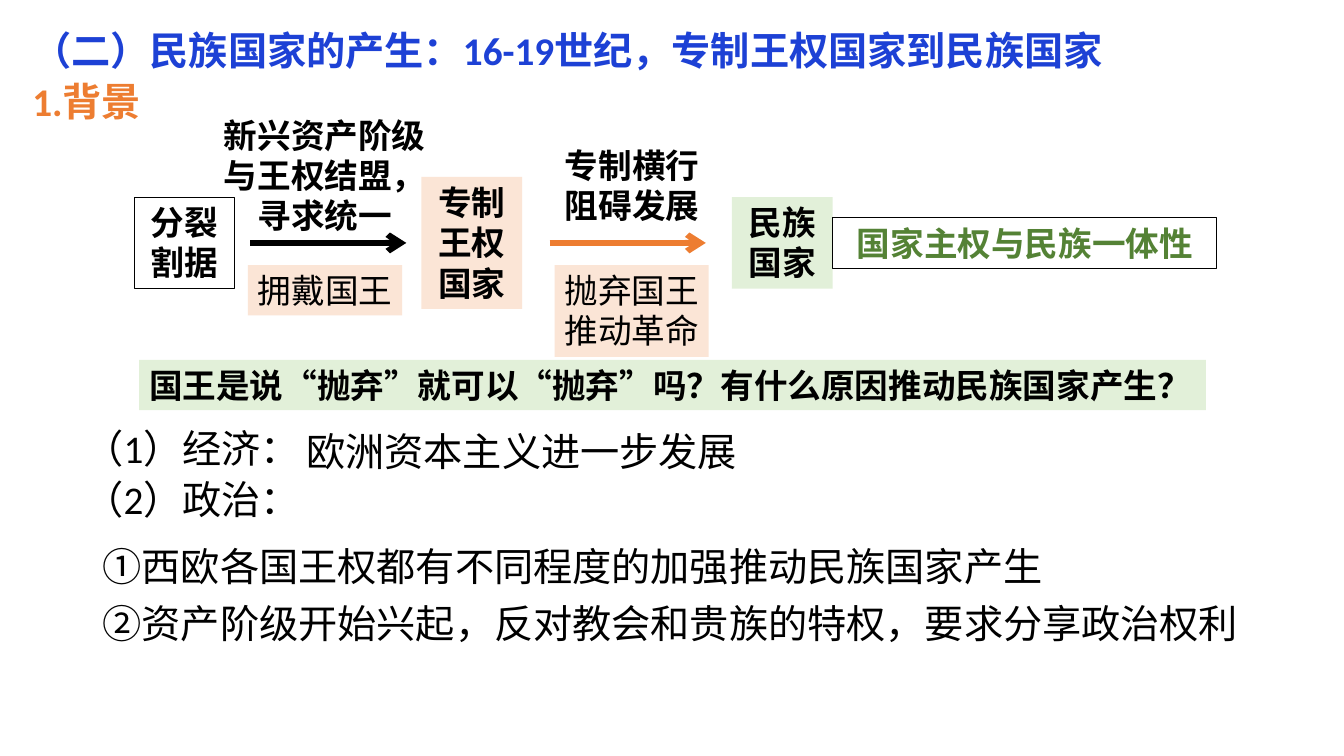
import pptx
import pptx.util
import pptx.dml.color
import pptx.enum.shapes
import pptx.enum.text
import pptx.oxml
import pptx.oxml.ns

COLORS = {"blue": "1D41D5", "orange": "ED7D31", "black": "000000",
          "peach": "FBE5D6", "mint": "E2F0D9", "green": "548235"}
LATIN, CJK = "Calibri", "Noto Sans CJK SC"
W, H = 13.33, 7.5
AXIS = 2.41          # height of the row of states and arrows
LABEL_TOP = 2.63     # captions under the arrows

# Content: title lines with their colours
TITLE = [("（二）民族国家的产生：16-19世纪，专制王权国家到民族国家", "blue"),
         ("1.背景", "orange")]

# States on the axis: lines, left, width, height, fill, border, colour, font
STATES = [
    (["专制王权国家"], 4.18, 1, 1.31, "peach", None, "black", CJK),
    (["分裂", "割据"], 1.33, 1, 0.91, None, "black", "black", CJK),
    (["民族国家"], 7.26, 1, 0.91, "mint", None, "black", CJK),
    (["国家主权与民族一体性"], 8.26, 3.81, 0.5, None, "black", "green", LATIN),
]

# Steps: arrow left, colour, cause (lines, left, top, width), result (lines, left, height)
STEPS = [
    (2.48, "black", (["新兴资产阶级与王权结盟，寻求统一"], 2.07, 1.28, 2.3),
     (["拥戴国王"], 2.46, 0.5)),
    (5.45, "orange", (["专制横行", "阻碍发展"], 5.37, 1.38, 1.8),
     (["抛弃国王", "推动革命"], 5.5, 0.91)),
]
ARROW_LENGTH = 1.55

QUESTION = "国王是说“抛弃”就可以“抛弃”吗？有什么原因推动民族国家产生？"

# Reasons: lines, box, line spacing, wrap
REASONS = [
    (["（1）经济：", "（2）政治："], (0.74, 4.11, 11.85, 1.65), 1.1, True),
    (["欧洲资本主义进一步发展"], (2.94, 4.19, 4.48, 0.57), 1.0, False),
    (["①西欧各国王权都有不同程度的加强推动民族国家产生",
      "②资产阶级开始兴起，反对教会和贵族的特权，要求分享政治权利"],
     (0.92, 5.24, 11.5, 1.23), 1.2, True),
]

ALIGN = pptx.enum.text.PP_ALIGN
ANCHOR = pptx.enum.text.MSO_ANCHOR


def rgb(name):
    return pptx.dml.color.RGBColor.from_string(COLORS[name])


def inches(*values):
    return [pptx.util.Inches(v) for v in values]


def write(sp, lines, size, colors=("black",), font=LATIN, bold=False,
          align=ALIGN.LEFT, anchor=ANCHOR.TOP, spacing=1.0, wrap=True):
    tf = sp.text_frame
    tf.auto_size = pptx.enum.text.MSO_AUTO_SIZE.NONE
    tf.word_wrap = wrap
    tf.vertical_anchor = anchor
    tf.margin_left = tf.margin_right = pptx.util.Inches(0.1)
    tf.margin_top = tf.margin_bottom = pptx.util.Inches(0.05)
    tf.text = "\n".join(lines)
    for i, p in enumerate(tf.paragraphs):
        p.alignment = align
        p.line_spacing = spacing
        p.space_before = p.space_after = pptx.util.Pt(0)
        for r in p.runs:
            r.font.size = pptx.util.Pt(size)
            r.font.bold = bold
            r.font.name = font
            r.font.color.rgb = rgb(colors[i % len(colors)])
            ea = pptx.oxml.parse_xml(
                f'<a:ea {pptx.oxml.ns.nsdecls("a")} typeface="{CJK}"/>')
            r.font._element.find(pptx.oxml.ns.qn("a:latin")).addnext(ea)


def add_text(s, box, lines, size, **style):
    write(s.shapes.add_textbox(*inches(*box)), lines, size, **style)


def add_box(s, box, lines, fill=None, border=None, **style):
    sp = s.shapes.add_shape(pptx.enum.shapes.MSO_SHAPE.RECTANGLE, *inches(*box))
    sp.shadow.inherit = False
    if fill:
        sp.fill.solid()
        sp.fill.fore_color.rgb = rgb(fill)
    else:
        sp.fill.background()
    if border:
        sp.line.color.rgb = rgb(border)
        sp.line.width = pptx.util.Pt(0.75)
    else:
        sp.line.fill.background()
    write(sp, lines, 24, **style)


def add_arrow(s, left, color):
    line = s.shapes.add_connector(pptx.enum.shapes.MSO_CONNECTOR.STRAIGHT,
                                  *inches(left, AXIS, left + ARROW_LENGTH, AXIS))
    line.line.color.rgb = rgb(color)
    line.line.width = pptx.util.Pt(4.25)
    ns = pptx.oxml.ns.nsdecls("a")
    ln = line.line._get_or_add_ln()
    ln.append(pptx.oxml.parse_xml(f'<a:tailEnd {ns} type="arrow"/>'))
    ln.addnext(pptx.oxml.parse_xml(f"<a:effectLst {ns}/>"))


def main():
    prs = pptx.Presentation()
    prs.slide_width, prs.slide_height = inches(W, H)
    s = prs.slides.add_slide(prs.slide_layouts[5])

    # Title
    title = s.shapes.title
    title.left, title.top, title.width, title.height = inches(0.22, 0.16, 11.15, 1.14)
    write(title, [t for t, _ in TITLE], 28, colors=[c for _, c in TITLE],
          bold=True, spacing=1.1)

    # States, centred on the axis
    for lines, left, width, height, fill, border, color, font in STATES:
        add_box(s, (left, AXIS - height / 2, width, height), lines, fill, border,
                colors=[color], font=font, bold=True, align=ALIGN.CENTER)

    # Arrows with causes above and results below
    for left, color, cause, result in STEPS:
        add_arrow(s, left, color)
        lines, x, y, width = cause
        add_text(s, (x, y, width, 0.91), lines, 24, font=CJK, bold=True,
                 align=ALIGN.CENTER, anchor=ANCHOR.MIDDLE)
        lines, x, height = result
        add_box(s, (x, LABEL_TOP, 1.53, height), lines, "peach", wrap=False)

    # Question and reasons
    add_box(s, (1.38, 3.57, 10.58, 0.5), [QUESTION], "mint",
            font=CJK, bold=True, wrap=False)
    for lines, box, spacing, wrap in REASONS:
        add_text(s, box, lines, 28, spacing=spacing, wrap=wrap)

    prs.save("out.pptx")


if __name__ == "__main__":
    main()
